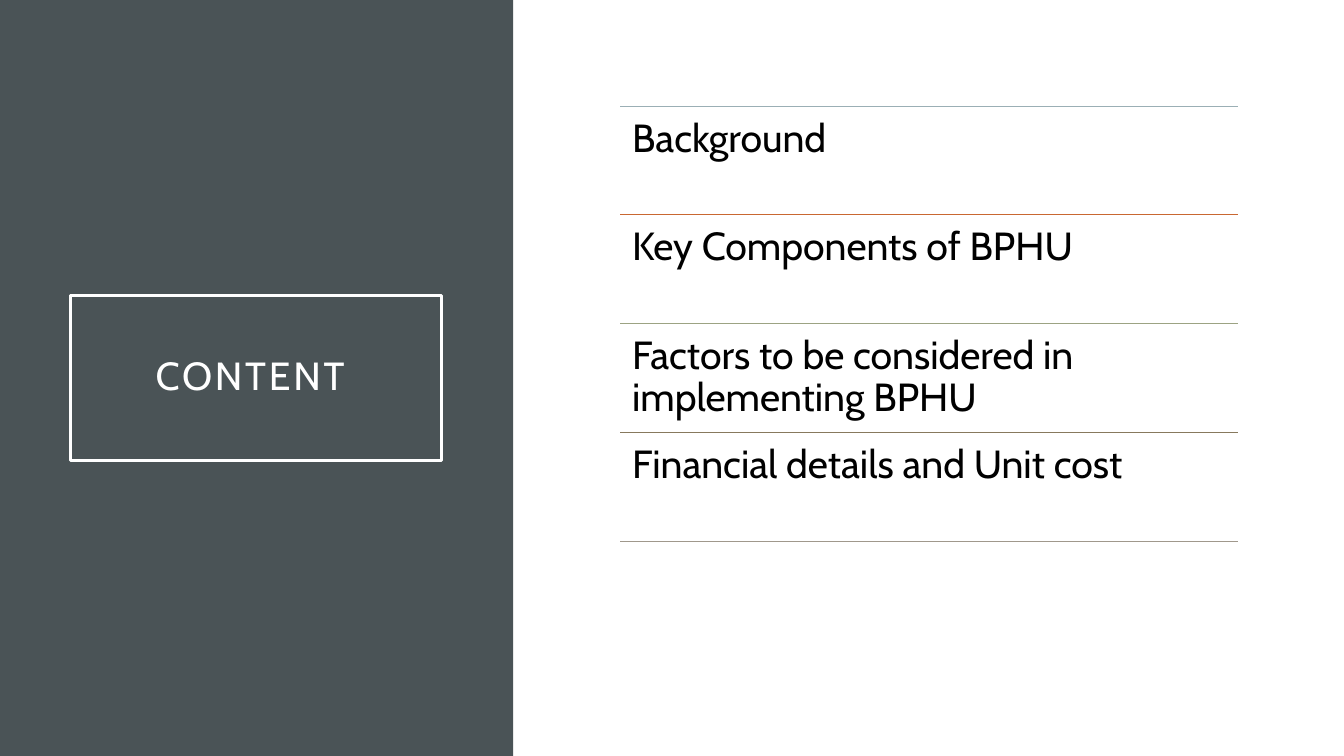
from pptx import Presentation
from pptx import util as u
from pptx.dml import color
from pptx.enum import shapes, text
from pptx.oxml import ns
from lxml import etree

COLOURS = {
    "panel": "4A5356",
    "white": "FFFFFF",
    "black": "000000",
    "blue": "9BAFB5",
    "orange": "C96731",
    "green": "9CA383",
    "brown": "87795D",
    "grey": "A0988C",
}


class ContentSlide:
    SCALE = 9144
    FONT = "Cabin"
    SIZE = u.Pt(28)

    def __init__(self, deck):
        self.slide = deck.slides.add_slide(deck.slide_layouts[6])

    def px(self, *lengths):
        return [length * self.SCALE for length in lengths]

    def colour(self, name):
        return color.RGBColor.from_string(COLOURS[name])

    def box(self, left, top, width, height, fill=None, line=None):
        box = self.slide.shapes.add_shape(
            shapes.MSO_SHAPE.RECTANGLE, *self.px(left, top, width, height))
        box.shadow.inherit = False
        if fill:
            box.fill.solid()
            box.fill.fore_color.rgb = self.colour(fill)
        else:
            box.fill.background()
        if line:
            box.line.color.rgb = self.colour(line)
            box.line.width = u.Pt(2.5)
        else:
            box.line.fill.background()
        return box

    def rule(self, left, top, width, name):
        rule = self.slide.shapes.add_connector(
            shapes.MSO_CONNECTOR.STRAIGHT, *self.px(left, top, left + width, top))
        rule.line.color.rgb = self.colour(name)
        rule.line.width = u.Pt(0.5)
        etree.SubElement(rule._element.spPr, ns.qn("a:effectLst"))

    def label(self, holder, words, name, inset, anchor, align, tracking=0):
        frame = holder.text_frame
        frame.word_wrap = True
        frame.vertical_anchor = anchor
        frame.margin_left, frame.margin_top, frame.margin_right, frame.margin_bottom = (
            self.px(*[inset] * 4))
        frame.text = words
        paragraph = frame.paragraphs[0]
        paragraph.alignment = align
        paragraph.line_spacing = 0.9
        run = paragraph.runs[0]
        run.font.name = self.FONT
        run.font.size = self.SIZE
        run.font.color.rgb = self.colour(name)
        if tracking:
            run.font._element.set("spc", str(tracking * 100))

    def title(self, words, left, top, width, height):
        frame = self.box(left, top, width, height, line="white")
        self.label(frame, words, "white", 20, text.MSO_ANCHOR.MIDDLE,
                   text.PP_ALIGN.CENTER, tracking=2)

    def topic(self, words, left, top, width, height):
        topic = self.slide.shapes.add_textbox(*self.px(left, top, width, height))
        self.label(topic, words, "black", 12, text.MSO_ANCHOR.TOP, text.PP_ALIGN.LEFT)


def main():
    deck = Presentation()
    deck.slide_width = u.Inches(13.33)
    deck.slide_height = u.Inches(7.5)
    content = ContentSlide(deck)

    content.box(0, 0, 509, 750, fill="panel")
    content.title("CONTENT ", 70, 293, 368, 164)

    topics = [
        "Background",
        "Key Components of BPHU",
        "Factors to be considered in implementing BPHU",
        "Financial details and Unit cost",
    ]
    rule_colours = ["blue", "orange", "green", "brown", "grey"]
    left, top, width, list_height = 615, 106, 613, 431
    rule_tops = [top + list_height * row // len(topics) for row in range(len(rule_colours))]

    for rule_top, name in zip(rule_tops, rule_colours):
        content.rule(left, rule_top, width, name)
    for rule_top, words in zip(rule_tops, topics):
        content.topic(words, left, rule_top, width, list_height // len(topics))

    deck.save("out.pptx")


if __name__ == "__main__":
    main()
